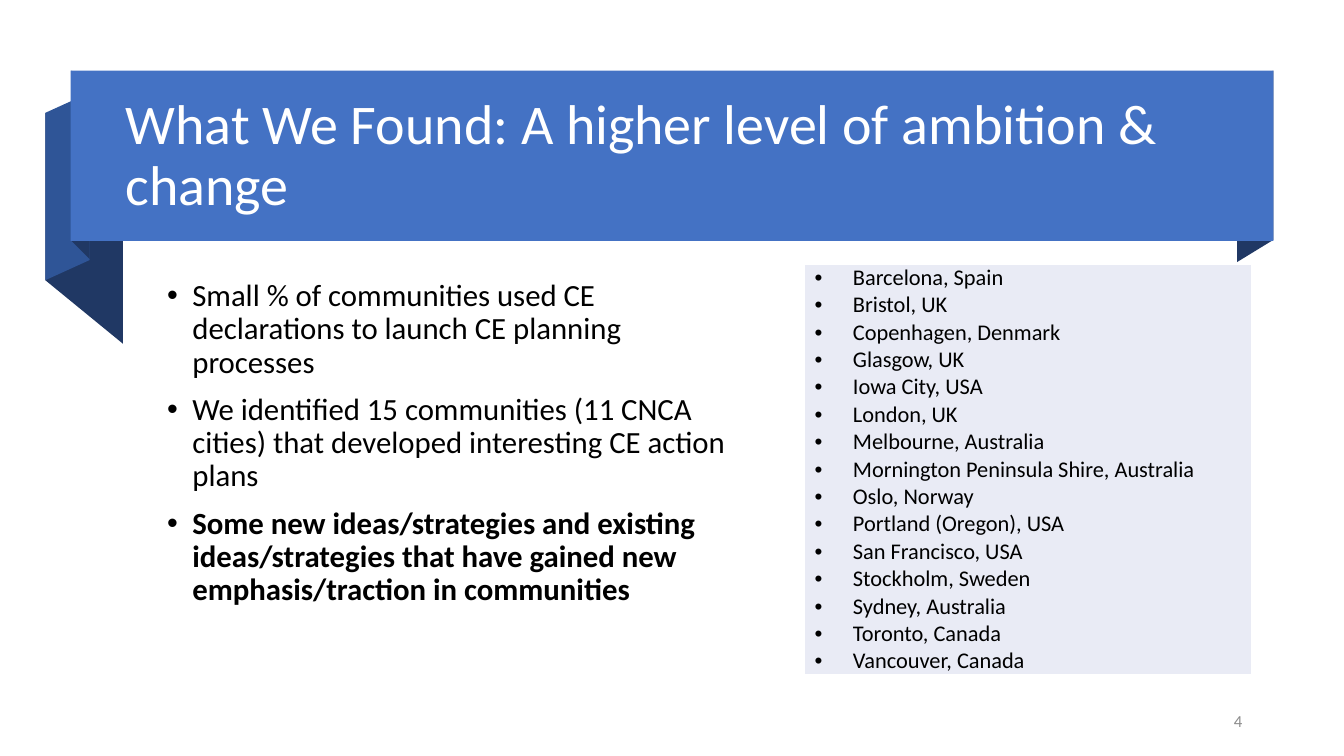
from pptx import Presentation
from pptx.util import Inches, Pt
from pptx.dml.color import RGBColor as Rgb
from pptx.enum.shapes import MSO_SHAPE as Shape
from pptx.enum.text import MSO_ANCHOR as Anchor, PP_ALIGN as Align
from pptx.oxml.ns import qn
from lxml.etree import SubElement as Sub

HUES = {
    "navy": "203864",
    "deep": "2F5597",
    "blue": "4472C4",
    "pale": "E9EBF5",
    "white": "FFFFFF",
    "black": "000000",
    "gray": "8C8C8C",
}

FOLDS = [
    ("navy", [(12.63, 2.38), (12.27, 2.6), (12.27, 0.91), (12.63, 0.7)]),
    ("navy", [(1.22, 3.41), (0.45, 2.78), (0.45, 1.12), (1.22, 1.75)]),
    ("deep", [(0.89, 2.58), (0.45, 2.78), (0.45, 1.12), (0.89, 0.92)]),
    ("navy", [(0.89, 2.57), (0.71, 2.39), (0.71, 0.7), (0.89, 0.89)]),
]

TITLE = "What We Found: A higher level of ambition & change"

POINTS = [
    "Small % of communities used CE declarations to launch CE planning processes",
    "We identified 15 communities (11 CNCA cities) that developed interesting CE action plans",
    "Some new ideas/strategies and existing ideas/strategies that have gained new emphasis/traction in communities",
]

CITIES = [
    "Barcelona, Spain",
    "Bristol, UK",
    "Copenhagen, Denmark",
    "Glasgow, UK",
    "Iowa City, USA",
    "London, UK",
    "Melbourne, Australia",
    "Mornington Peninsula Shire, Australia",
    "Oslo, Norway",
    "Portland (Oregon), USA",
    "San Francisco, USA",
    "Stockholm, Sweden",
    "Sydney, Australia",
    "Toronto, Canada",
    "Vancouver, Canada",
]


def tint(hue):
    return Rgb.from_string(HUES[hue])


def apply(item, form):
    for name, value in form.items():
        setattr(item, name, value)


def paint(shape, hue):
    shape.shadow.inherit = False
    shape.fill.solid()
    shape.fill.fore_color.rgb = tint(hue)
    shape.line.fill.background()


def add_fold(slide, hue, spots):
    start, *rest = [(Inches(x), Inches(y)) for x, y in spots]
    pen = slide.shapes.build_freeform(*start)
    pen.add_line_segments(rest, close=True)
    paint(pen.convert_to_shape(), hue)


def add_band(slide, box):
    band = slide.shapes.add_shape(Shape.RECTANGLE, *map(Inches, box))
    paint(band, "blue")


def add_mark(para, indent):
    props = para._p.get_or_add_pPr()
    props.set("marL", str(Inches(indent)))
    props.set("indent", str(-Inches(indent)))
    Sub(props, qn("a:buFont"), typeface="Arial")
    Sub(props, qn("a:buChar"), char="•")


def write(frame, lines, size, hue, form=None, indent=0):
    for num, line in enumerate(lines):
        para = frame.add_paragraph() if num else frame.paragraphs[0]
        apply(para, form or {})
        run = para.add_run()
        run.text = line
        apply(run.font, {"name": "Calibri", "size": Pt(size)})
        run.font.color.rgb = tint(hue)
        if indent:
            add_mark(para, indent)


def add_text(slide, box, anchor, *text):
    frame = slide.shapes.add_textbox(*map(Inches, box)).text_frame
    apply(frame, {"word_wrap": True, "vertical_anchor": anchor})
    write(frame, *text)
    return frame


def add_list(slide, box):
    table = slide.shapes.add_table(1, 1, *map(Inches, box)).table
    apply(table, {"first_row": False, "horz_banding": False})
    cell = table.cell(0, 0)
    apply(cell, {
        "margin_left": Inches(0.1),
        "margin_right": Inches(0.1),
        "margin_top": 0,
        "margin_bottom": 0,
    })
    cell.fill.solid()
    cell.fill.fore_color.rgb = tint("pale")
    write(cell.text_frame, CITIES, 16, "black", None, 0.38)


def main():
    deck = Presentation()
    apply(deck, {"slide_width": Inches(13.33), "slide_height": Inches(7.5)})
    slide = deck.slides.add_slide(deck.slide_layouts[6])
    for hue, spots in FOLDS:
        add_fold(slide, hue, spots)
    add_band(slide, (0.7, 0.7, 11.93, 1.69))
    add_text(slide, (1.15, 0.83, 11.27, 1.45), Anchor.MIDDLE,
             [TITLE], 40, "white", {"line_spacing": 0.9})
    body = add_text(slide, (1.56, 2.73, 5.76, 3.9), Anchor.TOP, POINTS, 22, "black",
                    {"line_spacing": 0.9, "space_before": Pt(10)}, 0.25)
    body.paragraphs[-1].runs[0].font.bold = True
    add_list(slide, (7.98, 2.62, 4.43, 4.07))
    add_text(slide, (9.42, 6.95, 3, 0.4), Anchor.MIDDLE,
             ["4"], 12, "gray", {"alignment": Align.RIGHT})
    deck.save("out.pptx")


if __name__ == "__main__":
    main()
